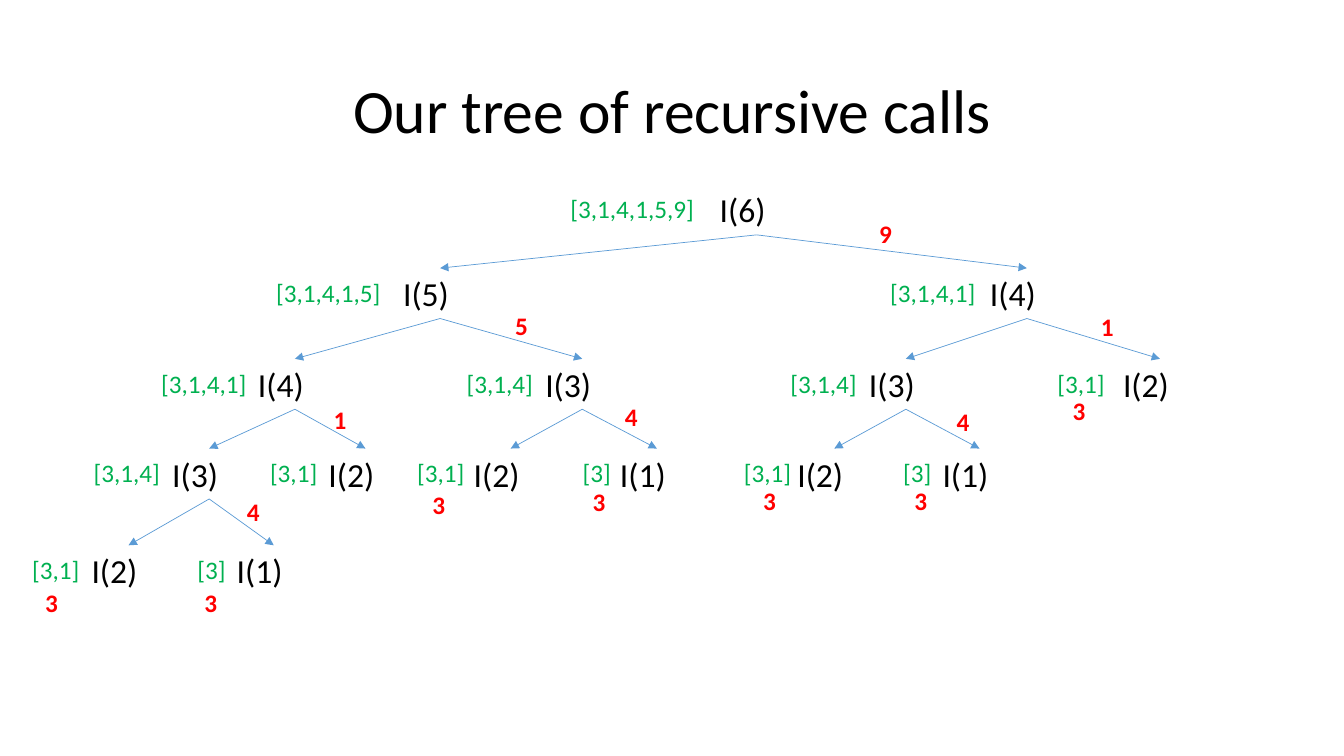
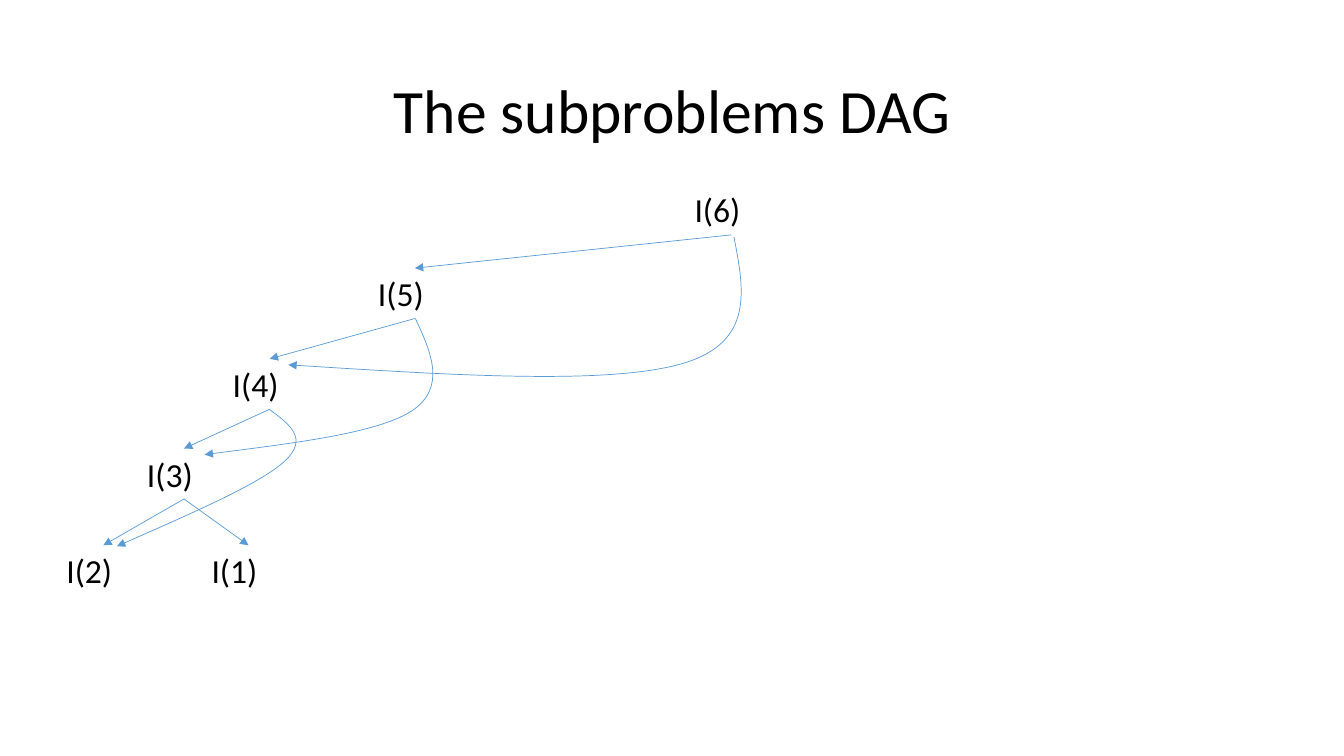
from pptx import Presentation
from pptx.dml.color import RGBColor
from pptx.enum.shapes import MSO_CONNECTOR as Connector
from pptx.enum.text import MSO_ANCHOR as Anchor, MSO_AUTO_SIZE as AutoSize, PP_ALIGN as Align
from pptx.oxml.ns import qn
from pptx.util import Emu, Pt
from lxml.etree import SubElement

PX = 9144  # EMU in one px, 100 px to the inch
BLACK = RGBColor(0x00, 0x00, 0x00)
GREEN = RGBColor(0x00, 0xB0, 0x50)
RED = RGBColor(0xFF, 0x00, 0x00)
BLUE = RGBColor(0x5B, 0x9B, 0xD5)
BOTTOM, TOP = 2, 0  # connection sites

# The input sequence; I(n) works on its first n values
SEQUENCE = [3, 1, 4, 1, 5, 9]
ROW_TOPS = [183, 266, 356, 445, 541]
LIST_WIDTHS = {6: 144, 5: 126, 4: 110, 3: 97, 2: 76, 1: 50}

# Route from the root (L: n-1, R: n-2) -> left of the call, left of its list
CALLS = {
    "": (704, 556),
    "L": (390, 264), "R": (972, 873),
    "LL": (246, 150), "LR": (531, 453), "RL": (852, 774), "RR": (1104, 1039),
    "LLL": (161, 83), "LLR": (316, 258), "LRL": (460, 404), "LRR": (605, 568),
    "RLL": (781, 728), "RLR": (925, 886),
    "LLLL": (81, 22), "LLLR": (225, 186),
}

# Places of the value added on each right branch
BRANCH_VALUES = {
    "R": (862, 212), "LR": (501, 303), "RR": (1082, 304), "LLR": (321, 396),
    "LRR": (610, 393), "RLR": (939, 398), "LLLR": (235, 487),
}

# Places of the base value under the leaves
LEAF_VALUES = {
    "RR": (1054, 387), "RLR": (897, 477), "RLL": (747, 477), "LRR": (578, 478),
    "LRL": (419, 481), "LLLR": (193, 578), "LLLL": (35, 578),
}

# Subproblems kept in the DAG, and its curved arrows as cubic Bézier points
DAG_ROUTES = ["", "L", "LL", "LLL", "LLLL", "LLLR"]
DAG_SHIFT = -25
DAG_CURVES = [
    [(267, 406), (287, 421), (307, 435), (282, 458), (256, 481), (186, 511), (116, 542)],
    [(412, 316), (428, 350), (443, 385), (408, 408), (373, 430), (288, 440), (203, 451)],
    [(728, 235), (738, 287), (749, 340), (676, 361), (602, 382), (444, 372), (286, 362)],
]


def call_size(route):
    return len(SEQUENCE) - route.count("L") - 2 * route.count("R")


class Deck:
    """Holds the shared style and the current slide."""

    font = "Calibri"

    def __init__(self):
        self.deck = Presentation()
        self.deck.slide_width = Emu(1333 * PX)
        self.deck.slide_height = Emu(750 * PX)
        self.page = None

    def new_page(self, title):
        self.page = self.deck.slides.add_slide(self.deck.slide_layouts[6])
        box = self.text(title, 92, 40, 1150, 145, 44, auto_size=AutoSize.NONE)
        box.text_frame.vertical_anchor = Anchor.MIDDLE
        para = box.text_frame.paragraphs[0]
        para.alignment = Align.CENTER
        para.line_spacing = 0.9

    def group(self):
        return self.page.shapes.add_group_shape()

    def text(self, words, left, top, width, height, size, color=BLACK, bold=False,
             parent=None, auto_size=AutoSize.SHAPE_TO_FIT_TEXT):
        shapes = (parent or self.page).shapes
        box = shapes.add_textbox(*(Emu(v * PX) for v in (left, top, width, height)))
        frame = box.text_frame
        frame.word_wrap = True
        frame.auto_size = auto_size
        span = frame.paragraphs[0].add_run()
        span.text = words
        span.font.name = self.font
        span.font.size = Pt(size)
        span.font.bold = bold
        span.font.color.rgb = color
        return box

    def value(self, number, place, parent):
        self.text(str(number), *place, 53, 40, 18, RED, True, parent)

    def arrow_style(self, shape):
        shape.line.color.rgb = BLUE
        shape.line.width = Pt(0.5)
        outline = shape.element.spPr.find(qn("a:ln"))
        SubElement(outline, qn("a:tailEnd"), type="triangle")

    def arrow(self, start, end):
        line = self.page.shapes.add_connector(Connector.STRAIGHT, 0, 0, 0, 0)
        line.begin_connect(start, BOTTOM)
        line.end_connect(end, TOP)
        self.arrow_style(line)
        SubElement(line.element.spPr, qn("a:effectLst"))

    def curved_arrow(self, points):
        builder = self.page.shapes.build_freeform(*points[0], scale=PX)
        builder.add_line_segments(points[1:], close=False)
        shape = builder.convert_to_shape()
        shape.fill.background()
        self.arrow_style(shape)
        shape.shadow.inherit = False
        # Turn every three line segments into one cubic curve
        outline = next(shape.element.iter(qn("a:path")))
        segments = outline.findall(qn("a:lnTo"))
        for first in range(0, len(segments), 3):
            curve = SubElement(outline, qn("a:cubicBezTo"))
            for segment in segments[first:first + 3]:
                curve.append(segment[0])
                outline.remove(segment)

    def calls(self, routes, shift=0):
        boxes = {
            route: self.text(f"I({call_size(route)})", CALLS[route][0] + shift,
                             ROW_TOPS[len(route)], 93, 50, 24)
            for route in routes
        }
        for route in routes:
            if route:
                self.arrow(boxes[route[:-1]], boxes[route])

    def save(self):
        self.deck.save("out.pptx")


def main():
    deck = Deck()

    # Tree of recursive calls
    deck.new_page("Our tree of recursive calls")
    deck.calls(CALLS)
    lists = deck.group()
    for route, (_, left) in CALLS.items():
        size = call_size(route)
        words = "[" + ",".join(map(str, SEQUENCE[:size])) + "]"
        deck.text(words, left, ROW_TOPS[len(route)] + 4, LIST_WIDTHS[size], 40,
                  18, GREEN, parent=lists)
    values = deck.group()
    for route, place in BRANCH_VALUES.items():
        deck.value(SEQUENCE[call_size(route[:-1]) - 1], place, values)
    for place in LEAF_VALUES.values():
        deck.value(SEQUENCE[0], place, values)

    # Subproblems DAG
    deck.new_page("The subproblems DAG")
    deck.calls(DAG_ROUTES, DAG_SHIFT)
    for points in DAG_CURVES:
        deck.curved_arrow(points)

    deck.save()


if __name__ == "__main__":
    main()
